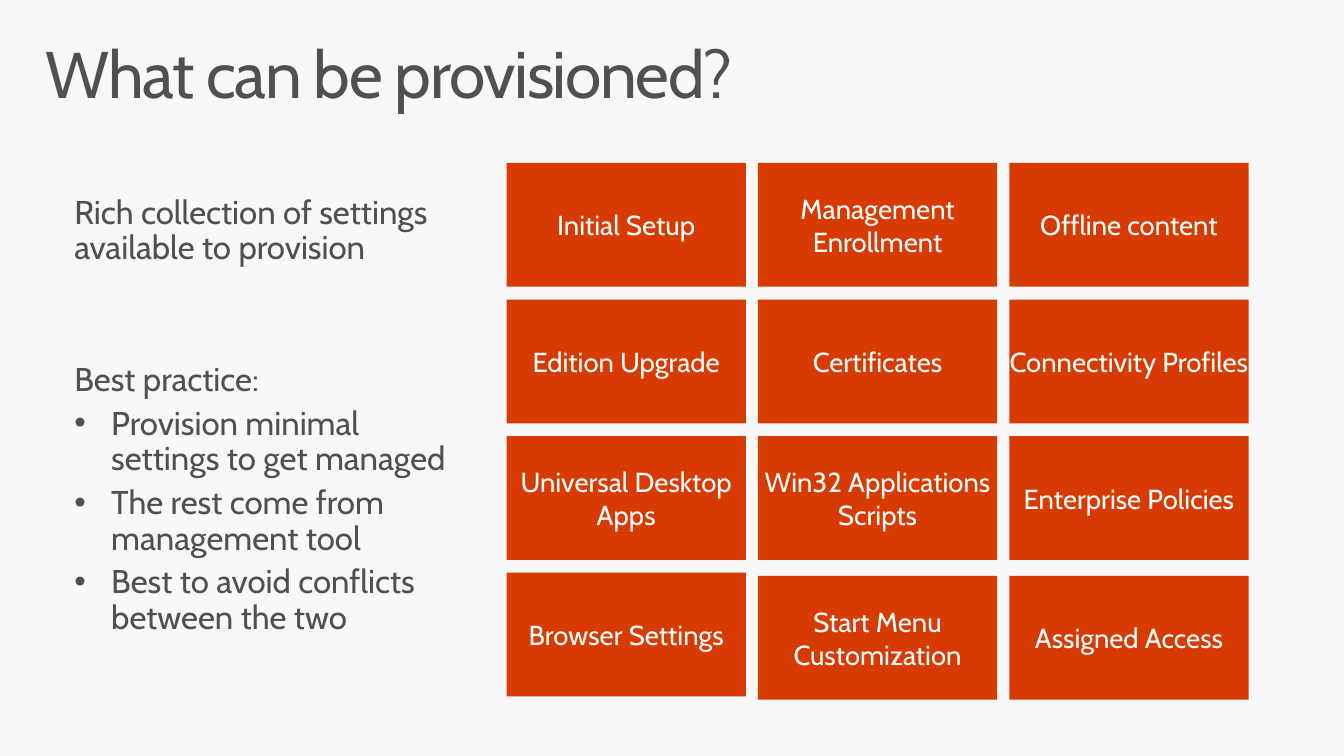
"""Build the slide listing what can be provisioned."""
from dataclasses import dataclass

import pptx
import pptx.dml.color
import pptx.enum.shapes
import pptx.enum.text
import pptx.oxml.ns
import pptx.util
from lxml import etree
from pptx.util import Cm, Pt

FONT = "Cabin"
GREY, WHITE, ORANGE, BACKGROUND = "505050", "FFFFFF", "D83B01", "F8F8F8"
COLUMNS = 3
GRID_LEFT, GRID_TOP = 13.02, 4.19
COLUMN_PITCH, ROW_PITCH = 6.46, 3.51
TILE_WIDTH, TILE_HEIGHT = 6.15, 3.18


@dataclass
class Tile:
    label: str
    drop: float = 0


@dataclass
class Advice:
    text: str
    bulleted: bool = False
    space_before: float = 0


TILES = [
    Tile("Initial Setup"),
    Tile("Management Enrollment"),
    Tile("Offline content"),
    Tile("Edition Upgrade"),
    Tile("Certificates"),
    Tile("Connectivity Profiles"),
    Tile("Universal Desktop Apps"),
    Tile("Win32 Applications\nScripts"),
    Tile("Enterprise Policies"),
    Tile("Browser Settings"),
    Tile("Start Menu Customization", drop=0.08),
    Tile("Assigned Access", drop=0.08),
]
ADVICE = [
    Advice("Rich collection of settings available to provision"),
    Advice("Best practice:", space_before=64),
    Advice("Provision minimal settings to get managed", bulleted=True),
    Advice("The rest come from management tool", bulleted=True),
    Advice("Best to avoid conflicts between the two", bulleted=True),
]


def paint(color_format, color: str) -> None:
    color_format.rgb = pptx.dml.color.RGBColor.from_string(color)


def set_font(paragraph, size: float, color: str) -> None:
    paragraph.font.name = FONT
    paragraph.font.size = Pt(size)
    paint(paragraph.font.color, color)


def set_margins(text_frame, horizontal: float, vertical: float) -> None:
    text_frame.margin_left = text_frame.margin_right = Cm(horizontal)
    text_frame.margin_top = text_frame.margin_bottom = Cm(vertical)
    text_frame.word_wrap = True


def add_bullet(paragraph) -> None:
    properties = paragraph._p.get_or_add_pPr()
    properties.set("marL", str(Cm(0.95)))
    properties.set("indent", str(Cm(-0.95)))
    for tag, attribute, value in (("a:buFont", "typeface", "Arial"), ("a:buChar", "char", "•")):
        etree.SubElement(properties, pptx.oxml.ns.qn(tag)).set(attribute, value)


def format_title(title) -> None:
    title.left, title.top, title.width, title.height = Cm(0.76), Cm(0.81), Cm(33.02), Cm(2.54)
    text_frame = title.text_frame
    text_frame.text = "What can be provisioned?"
    set_margins(text_frame, 0.41, 0.25)
    text_frame.auto_size = pptx.enum.text.MSO_AUTO_SIZE.NONE
    text_frame.vertical_anchor = pptx.enum.text.MSO_ANCHOR.TOP
    paragraph = text_frame.paragraphs[0]
    paragraph.alignment = pptx.enum.text.PP_ALIGN.LEFT
    paragraph.line_spacing = 0.9
    set_font(paragraph, 48, GREY)
    paragraph.runs[0]._r.get_or_add_rPr().set("spc", "-100")


def add_tile(slide, tile: Tile, row: int, column: int) -> None:
    shape = slide.shapes.add_shape(
        pptx.enum.shapes.MSO_SHAPE.RECTANGLE,
        Cm(GRID_LEFT + column * COLUMN_PITCH),
        Cm(GRID_TOP + row * ROW_PITCH + tile.drop),
        Cm(TILE_WIDTH),
        Cm(TILE_HEIGHT),
    )
    shape.shadow.inherit = False
    shape.fill.solid()
    paint(shape.fill.fore_color, ORANGE)
    shape.line.fill.background()
    text_frame = shape.text_frame
    text_frame.text = tile.label
    set_margins(text_frame, 0, 0.13)
    text_frame.vertical_anchor = pptx.enum.text.MSO_ANCHOR.MIDDLE
    for paragraph in text_frame.paragraphs:
        paragraph.alignment = pptx.enum.text.PP_ALIGN.CENTER
        set_font(paragraph, 20, WHITE)


def add_advice(slide, items: list[Advice]) -> None:
    text_box = slide.shapes.add_textbox(Cm(1.4), Cm(4.62), Cm(11.3), Cm(13.39))
    text_frame = text_box.text_frame
    text_frame.text = "\n".join(item.text for item in items)
    set_margins(text_frame, 0.51, 0.41)
    text_frame.auto_size = pptx.enum.text.MSO_AUTO_SIZE.SHAPE_TO_FIT_TEXT
    for paragraph, item in zip(text_frame.paragraphs, items):
        if item.bulleted:
            add_bullet(paragraph)
        paragraph.line_spacing = 0.9
        paragraph.space_before = Pt(item.space_before)
        paragraph.space_after = Pt(6)
        set_font(paragraph, 24, GREY)


def main() -> None:
    presentation = pptx.Presentation()
    presentation.slide_width, presentation.slide_height = Cm(34.54), Cm(19.43)
    slide = presentation.slides.add_slide(presentation.slide_layouts[5])
    slide.background.fill.solid()
    paint(slide.background.fill.fore_color, BACKGROUND)
    format_title(slide.shapes.title)
    for index, tile in enumerate(TILES):
        add_tile(slide, tile, *divmod(index, COLUMNS))
    add_advice(slide, ADVICE)
    presentation.save("out.pptx")


if __name__ == "__main__":
    main()
